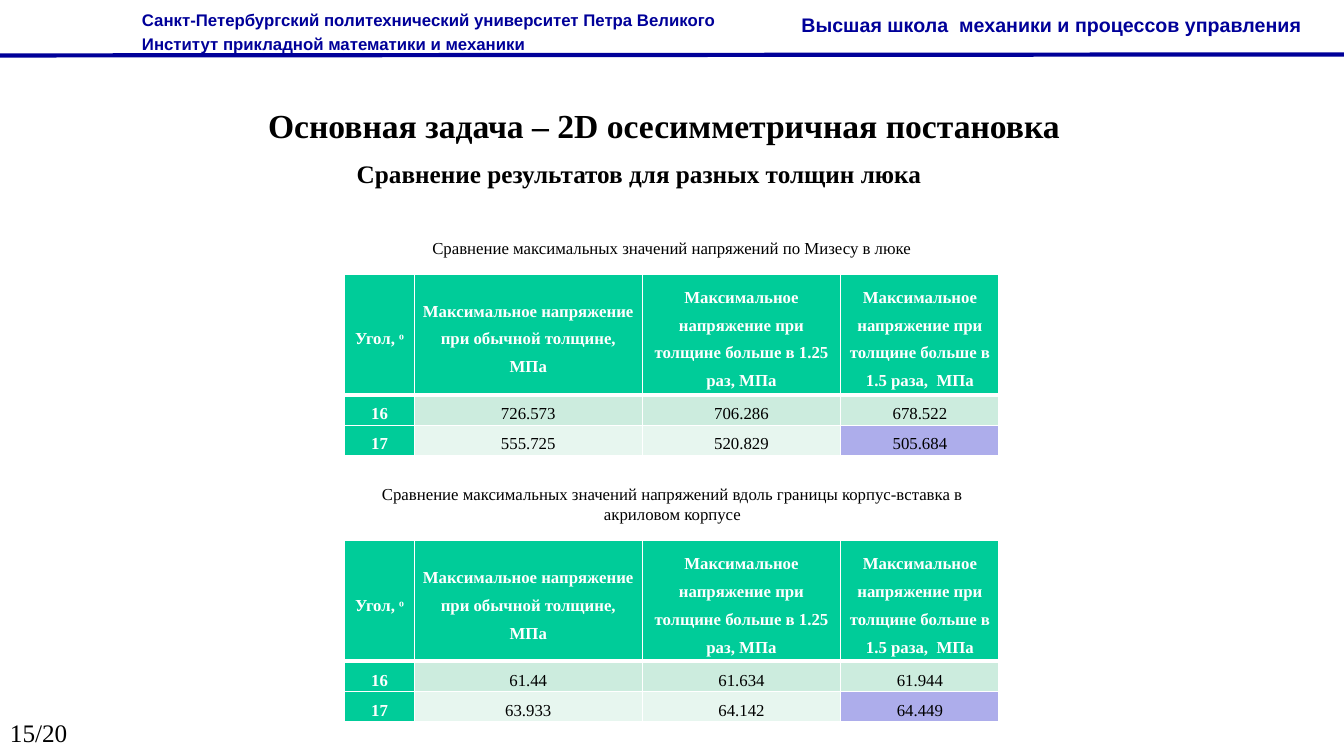
from lxml import etree
from pptx import Presentation
from pptx.dml.color import RGBColor
from pptx.enum.shapes import MSO_CONNECTOR
from pptx.enum.text import MSO_ANCHOR, PP_ALIGN
from pptx.oxml.ns import qn
from pptx.util import Inches, Pt

STRAIGHT = MSO_CONNECTOR.STRAIGHT
TOP, MIDDLE = MSO_ANCHOR.TOP, MSO_ANCHOR.MIDDLE
LEFT, CENTER = PP_ALIGN.LEFT, PP_ALIGN.CENTER

NAVY = RGBColor(0x00, 0x00, 0x99)
BLACK = RGBColor(0x00, 0x00, 0x00)
WHITE = RGBColor(0xFF, 0xFF, 0xFF)
GREEN = RGBColor(0x00, 0xCC, 0x99)
PALE_GREEN = RGBColor(0xCC, 0xEC, 0xDE)
FAINT_GREEN = RGBColor(0xE7, 0xF6, 0xEF)
LILAC = RGBColor(0xAD, 0xAD, 0xEB)
SANS, SERIF = "Arial", "Times New Roman"

UNIVERSITY = ("Санкт-Петербургский политехнический университет Петра Великого\v"
              "Институт прикладной математики и механики")
SCHOOL = "Высшая школа  механики и процессов управления"
TITLE = "Основная задача – 2D осесимметричная постановка"
SUBTITLE = "Сравнение результатов для разных толщин люка"
PAGE = "15/20"
HATCH_CAPTION = "Сравнение максимальных значений напряжений по Мизесу в люке"
BODY_CAPTION = ("Сравнение максимальных значений напряжений вдоль границы "
                "корпус-вставка в акриловом корпусе")

HEADINGS = (
    "Угол, ᵒ",
    "Максимальное напряжение при обычной толщине, МПа",
    "Максимальное напряжение при толщине больше в 1.25 раз, МПа",
    "Максимальное напряжение при толщине больше в 1.5 раза,  МПа",
)
HATCH_STRESS = (
    ("16", "726.573", "706.286", "678.522"),
    ("17", "555.725", "520.829", "505.684"),
)
BODY_STRESS = (
    ("16", "61.44", "61.634", "61.944"),
    ("17", "63.933", "64.142", "64.449"),
)

TABLE_LEFT = 3.42
COLUMN_WIDTHS = (0.69, 2.26, 1.97, 1.57)
ROW_HEIGHTS = (1.2, 0.3, 0.3)
ROW_FILLS = (GREEN, PALE_GREEN, FAINT_GREEN)


def style(paragraph, size, color, bold, font=SERIF, align=LEFT, spacing=1.0):
    paragraph.alignment = align
    paragraph.line_spacing = spacing
    paragraph.font.size = Pt(size)
    paragraph.font.name = font
    paragraph.font.bold = bold
    paragraph.font.color.rgb = color


def add_text(slide, text, box, size, color=BLACK, bold=False, font=SERIF,
             align=LEFT, spacing=1.0, wrap=False, anchor=TOP):
    frame = slide.shapes.add_textbox(*map(Inches, box)).text_frame
    frame.word_wrap = wrap
    frame.vertical_anchor = anchor
    frame.text = text
    style(frame.paragraphs[0], size, color, bold, font, align, spacing)


def add_border(cell, side, width):
    properties = cell._tc.get_or_add_tcPr()
    line = etree.SubElement(properties, qn(f"a:ln{side}"), w=str(Pt(width)))
    fill = etree.SubElement(line, qn("a:solidFill"))
    etree.SubElement(fill, qn("a:srgbClr"), val=str(WHITE))


def fill_color(row, column):
    if column == 0:
        return GREEN
    if (row, column) == (len(ROW_FILLS) - 1, len(HEADINGS) - 1):
        return LILAC
    return ROW_FILLS[row]


def add_stress_table(slide, stress, top, anchor):
    rows = (HEADINGS,) + stress
    table = slide.shapes.add_table(
        len(rows), len(HEADINGS), Inches(TABLE_LEFT), Inches(top),
        Inches(sum(COLUMN_WIDTHS)), Inches(sum(ROW_HEIGHTS))).table
    for column, width in zip(table.columns, COLUMN_WIDTHS):
        column.width = Inches(width)
    for r, values in enumerate(rows):
        table.rows[r].height = Inches(ROW_HEIGHTS[r])
        for c, value in enumerate(values):
            cell = table.cell(r, c)
            is_heading = r == 0 or c == 0
            cell.text = value
            cell.margin_left = cell.margin_right = Inches(0.07)
            cell.margin_top = cell.margin_bottom = 0
            cell.vertical_anchor = MIDDLE if r == 0 else anchor
            for side, width in (("L", 1), ("R", 1), ("T", 3 if r == 1 else 1),
                                ("B", 3 if r == 0 else 1)):
                add_border(cell, side, width)
            cell.fill.solid()
            cell.fill.fore_color.rgb = fill_color(r, c)
            paragraph = cell.text_frame.paragraphs[0]
            paragraph.space_after = Pt(8)
            style(paragraph, 12, WHITE if is_heading else BLACK, is_heading,
                  align=CENTER, spacing=1.5)


def main():
    deck = Presentation()
    deck.slide_width, deck.slide_height = Inches(13.33), Inches(7.5)
    slide = deck.slides.add_slide(deck.slide_layouts[6])

    header_rule = slide.shapes.add_connector(
        STRAIGHT, 0, Inches(0.55), Inches(13.33), Inches(0.54))
    header_rule.line.color.rgb = NAVY
    header_rule.line.width = Pt(3)
    etree.SubElement(header_rule._element.spPr, qn("a:effectLst"))

    add_text(slide, UNIVERSITY, (1.31, 0.01, 6.17, 0.56), 12, NAVY, True, SANS,
             spacing=1.2, wrap=True)
    add_text(slide, SCHOOL, (7.85, 0.03, 5.4, 0.38), 14, NAVY, True, SANS,
             spacing=1.2, wrap=True)
    add_text(slide, TITLE, (2.56, 0.99, 8.22, 0.5), 24, bold=True)
    add_text(slide, SUBTITLE, (3.44, 1.5, 5.86, 0.4), 18, bold=True, spacing=1.07)

    add_stress_table(slide, HATCH_STRESS, 2.72, TOP)
    add_text(slide, HATCH_CAPTION, (0, 2.21, 13.33, 0.5), 12, align=CENTER,
             anchor=MIDDLE)
    add_stress_table(slide, BODY_STRESS, 5.36, MIDDLE)
    add_text(slide, BODY_CAPTION, (3.46, 4.75, 6.42, 0.5), 12, align=CENTER,
             wrap=True, anchor=MIDDLE)
    add_text(slide, PAGE, (0, 7.07, 0.78, 0.4), 18)

    deck.save("out.pptx")


if __name__ == "__main__":
    main()
